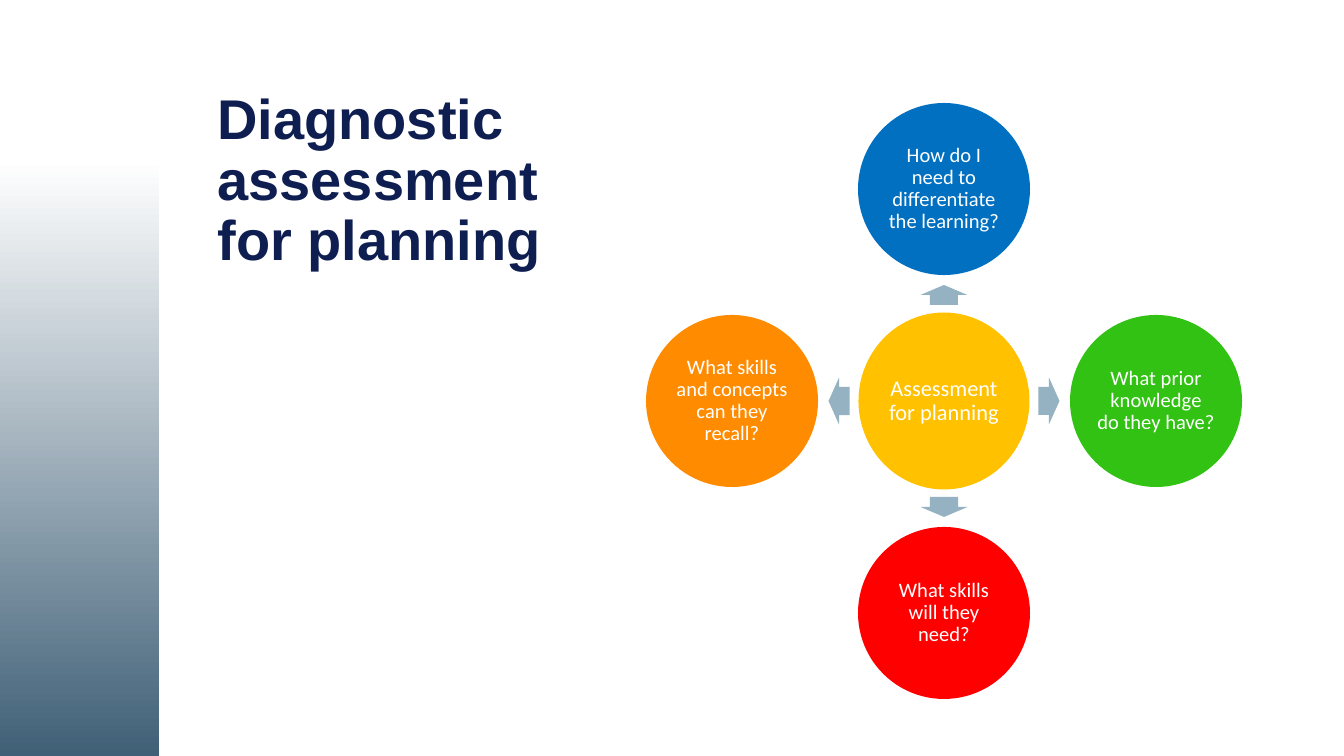
from pptx import Presentation
from pptx.dml.color import RGBColor
from pptx.enum.shapes import MSO_SHAPE
from pptx.enum.text import MSO_ANCHOR, MSO_AUTO_SIZE, PP_ALIGN
from pptx.util import Emu, Pt

EMU_PER_PX = 914400 / 134.4


def px(length):
    return Emu(round(length * EMU_PER_PX))


def color(hex_string):
    return RGBColor.from_string(hex_string)


class SlideBuilder:
    TITLE_FONT, BODY_FONT = "Arial", "Calibri"
    NAVY, WHITE, STEEL, ARROW = "0F1E50", "FFFFFF", "406077", "95B2C2"

    def __init__(self, presentation):
        self.slide = presentation.slides.add_slide(presentation.slide_layouts[5])

    def shape(self, kind, left, top, width, height):
        shape = self.slide.shapes.add_shape(
            kind, px(left), px(top), px(width), px(height))
        shape.shadow.inherit = False
        shape.line.fill.background()
        return shape

    def centered_shape(self, kind, center_x, center_y, width, height, fill):
        shape = self.shape(kind, center_x - width / 2, center_y - height / 2,
                           width, height)
        shape.fill.solid()
        shape.fill.fore_color.rgb = color(fill)
        return shape

    def style(self, paragraph, font_name, size, font_color, alignment):
        paragraph.alignment = alignment
        paragraph.line_spacing = 0.9
        font = paragraph.font
        font.name, font.size = font_name, Pt(size)
        font.color.rgb = color(font_color)

    def title(self, text, left, top, width, height):
        title = self.slide.shapes.title
        title.left, title.top = px(left), px(top)
        title.width, title.height = px(width), px(height)
        frame = title.text_frame
        frame.text = text
        frame.auto_size = MSO_AUTO_SIZE.NONE
        frame.vertical_anchor = MSO_ANCHOR.MIDDLE
        paragraph = frame.paragraphs[0]
        self.style(paragraph, self.TITLE_FONT, 30, self.NAVY, PP_ALIGN.LEFT)
        paragraph.font.bold = True

    def gradient_bar(self, left, top, width, height):
        bar = self.shape(MSO_SHAPE.RECTANGLE, left, top, width, height)
        bar.fill.gradient()
        bar.fill.gradient_angle = 90
        stops = [(0, self.STEEL), (0.79, self.WHITE)]
        for stop, (position, hex_string) in zip(bar.fill.gradient_stops, stops):
            stop.position = position
            stop.color.rgb = color(hex_string)

    def circle(self, text, center_x, center_y, width, height, fill, size):
        circle = self.centered_shape(
            MSO_SHAPE.OVAL, center_x, center_y, width, height, fill)
        frame = circle.text_frame
        frame.word_wrap = True
        frame.vertical_anchor = MSO_ANCHOR.MIDDLE
        frame.margin_left = frame.margin_right = px(2)
        frame.margin_top = frame.margin_bottom = px(2)
        frame.text = text
        self.style(frame.paragraphs[0], self.BODY_FONT, size, self.WHITE,
                   PP_ALIGN.CENTER)

    def arrow(self, center_x, center_y, length, rotation):
        arrow = self.centered_shape(
            MSO_SHAPE.RIGHT_ARROW, center_x, center_y, length, 47, self.ARROW)
        arrow.adjustments[0], arrow.adjustments[1] = 0.6, 0.5
        arrow.rotation = rotation


def main():
    presentation = Presentation()
    presentation.slide_width, presentation.slide_height = px(1344), px(756)
    builder = SlideBuilder(presentation)

    # Side bar and title
    builder.gradient_bar(0, 0, 159, 756)
    builder.title("Diagnostic \vassessment \vfor planning", 204, 78, 1114, 208)

    # Hub of the diagram
    hub_x, hub_y = 944, 401
    builder.circle("Assessment for planning", hub_x, hub_y, 171, 177, "FFC100", 12)

    # Questions around the hub: direction, rotation, arrow distance and length
    questions = [
        ("How do I need to differentiate the learning?", 0, -1, 270, 106, 20, "0270C0"),
        ("What prior knowledge do they have?", 1, 0, 0, 105, 21, "32C213"),
        ("What skills will they need?", 0, 1, 90, 106, 20, "FF0000"),
        ("What skills and concepts can they recall?", -1, 0, 180, 105, 21, "FF8B00"),
    ]
    orbit, diameter = 212, 172
    for text, step_x, step_y, rotation, distance, length, fill in questions:
        builder.arrow(hub_x + step_x * distance, hub_y + step_y * distance,
                      length, rotation)
        builder.circle(text, hub_x + step_x * orbit, hub_y + step_y * orbit,
                       diameter, diameter, fill, 11)

    presentation.save("out.pptx")


if __name__ == "__main__":
    main()
